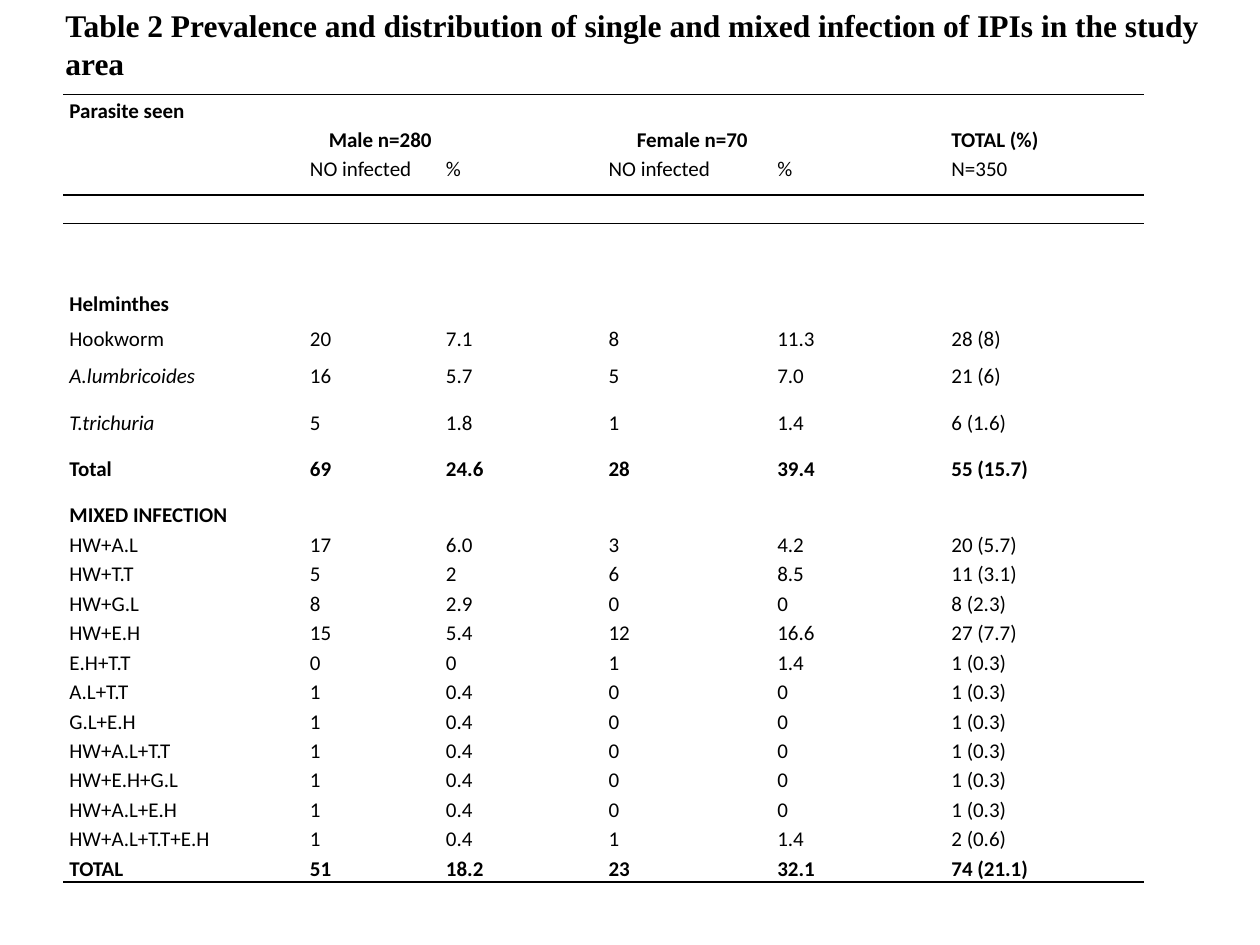
from dataclasses import dataclass

from lxml import etree
from pptx import Presentation
from pptx.dml.color import RGBColor
from pptx.enum.text import MSO_ANCHOR, MSO_AUTO_SIZE, PP_ALIGN
from pptx.oxml.ns import qn
from pptx.util import Cm, Pt

JUSTIFY = PP_ALIGN.JUSTIFY
BOTTOM = MSO_ANCHOR.BOTTOM
GROW = MSO_AUTO_SIZE.SHAPE_TO_FIT_TEXT
NO_STYLE = "{2D5ABB26-0587-4C30-8999-92F81FD0307C}"


@dataclass(frozen=True)
class Theme:
    ink: str = "000000"
    title_font: str = "Times New Roman"
    table_font: str = "Calibri"
    title_size: float = 18
    table_size: float = 12
    rule_width: float = 1
    line_spacing: float = 1.15


@dataclass(frozen=True)
class Row:
    height: float  # cm
    texts: tuple[str, ...] = ()
    bold: bool = False
    italic_name: bool = False
    rules: tuple[str, ...] = ()


THEME = Theme()
COL_WIDTHS = (4.85, 2.74, 3.28, 3.4, 3.51, 4.01)
CELL_INSET = 0.13
GROUP_INDENTS = {1: 0.38, 3: 0.57}  # merged header columns
LINE = 0.59  # height of a one-line row

# Table content
MIXED = (
    ("HW+A.L", "17", "6.0", "3", "4.2", "20 (5.7)"),
    ("HW+T.T", "5", "2", "6", "8.5", "11 (3.1)"),
    ("HW+G.L", "8", "2.9", "0", "0", "8 (2.3)"),
    ("HW+E.H", "15", "5.4", "12", "16.6", "27 (7.7)"),
    ("E.H+T.T", "0", "0", "1", "1.4", "1 (0.3)"),
    ("A.L+T.T", "1", "0.4", "0", "0", "1 (0.3)"),
    ("G.L+E.H", "1", "0.4", "0", "0", "1 (0.3)"),
    ("HW+A.L+T.T", "1", "0.4", "0", "0", "1 (0.3)"),
    ("HW+E.H+G.L", "1", "0.4", "0", "0", "1 (0.3)"),
    ("HW+A.L+E.H", "1", "0.4", "0", "0", "1 (0.3)"),
    ("HW+A.L+T.T+E.H", "1", "0.4", "1", "1.4", "2 (0.6)"),
)
ROWS = (
    Row(1.18, ("Parasite seen", "Male n=280", "", "Female n=70", "", "TOTAL (%)"),
        bold=True, rules=("lnT",)),
    Row(0.85, ("", "NO infected", "%", "NO infected", "%", "N=350"), rules=("lnB",)),
    Row(0.58, rules=("lnT",)),
    Row(0.56),
    Row(0.74),
    Row(0.69, ("Helminthes",), bold=True),
    Row(0.76, ("Hookworm", "20", "7.1", "8", "11.3", "28 (8)")),
    Row(0.95, ("A.lumbricoides", "16", "5.7", "5", "7.0", "21 (6)"), italic_name=True),
    Row(0.91, ("T.trichuria", "5", "1.8", "1", "1.4", "6 (1.6)"), italic_name=True),
    Row(0.94, ("Total", "69", "24.6", "28", "39.4", "55 (15.7)"), bold=True),
    Row(LINE, ("MIXED INFECTION",), bold=True),
    *(Row(LINE, texts) for texts in MIXED),
    Row(LINE, ("TOTAL", "51", "18.2", "23", "32.1", "74 (21.1)"), bold=True, rules=("lnB",)),
)


def add_run(p, text: str, font: str, size: float, bold: bool, italic: bool = False) -> None:
    r = p.add_run()
    r.text = text
    r.font.name = font
    r.font.size = Pt(size)
    r.font.bold = bold
    r.font.italic = italic
    r.font.color.rgb = RGBColor.from_string(THEME.ink)


def add_rule(cell, side: str) -> None:
    """Draw one border; border elements come before the fill."""
    ln = etree.Element(qn("a:" + side), w=str(Pt(THEME.rule_width)))
    fill = etree.SubElement(ln, qn("a:solidFill"))
    etree.SubElement(fill, qn("a:srgbClr"), val=THEME.ink)
    cell._tc.get_or_add_tcPr().insert(0, ln)


def fill_cell(cell, row: Row, col: int) -> None:
    cell.margin_left = cell.margin_right = Cm(CELL_INSET)
    cell.margin_top = cell.margin_bottom = Cm(0)
    cell.fill.background()
    for side in row.rules:
        add_rule(cell, side)
    p = cell.text_frame.paragraphs[0]
    text = row.texts[col] if col < len(row.texts) else ""
    if text:
        p.alignment = JUSTIFY
        p.line_spacing = THEME.line_spacing
        add_run(p, text, THEME.table_font, THEME.table_size, row.bold,
                row.italic_name and col == 0)
    else:
        # Keep empty cells from stretching their row
        etree.SubElement(p._p, qn("a:endParaRPr"), sz=str(int(THEME.table_size * 100)))


def add_prevalence_table(s) -> None:
    gf = s.shapes.add_table(len(ROWS), len(COL_WIDTHS), Cm(1.27), Cm(1.9),
                            Cm(sum(COL_WIDTHS)), Cm(sum(row.height for row in ROWS)))
    table = gf.table
    table.first_row = table.horz_banding = False
    for style in gf.element.iter(qn("a:tableStyleId")):
        style.text = NO_STYLE
    for col, width in enumerate(COL_WIDTHS):
        table.columns[col].width = Cm(width)
    for i, row in enumerate(ROWS):
        table.rows[i].height = Cm(row.height)
        for col in range(len(COL_WIDTHS)):
            fill_cell(table.cell(i, col), row, col)

    # Group headings sit on the lower line of the first row
    for col, indent in GROUP_INDENTS.items():
        cell = table.cell(0, col)
        cell.merge(table.cell(0, col + 1))
        cell.margin_left = Cm(CELL_INSET + indent)
    for col in (*GROUP_INDENTS, len(COL_WIDTHS) - 1):
        table.cell(0, col).vertical_anchor = BOTTOM


def add_title(s, text: str) -> None:
    sp = s.shapes.add_textbox(Cm(1.07), Cm(0), Cm(23.4), Cm(1.8))
    tf = sp.text_frame
    tf.word_wrap = True
    tf.auto_size = GROW
    add_run(tf.paragraphs[0], text, THEME.title_font, THEME.title_size, True)


def main() -> None:
    prs = Presentation()
    prs.slide_width, prs.slide_height = Cm(25.4), Cm(19.05)
    s = prs.slides.add_slide(prs.slide_layouts[6])
    add_prevalence_table(s)
    add_title(s, "Table 2 Prevalence and distribution of single and mixed "
                 "infection of IPIs in the study area")
    prs.save("out.pptx")


if __name__ == "__main__":
    main()
